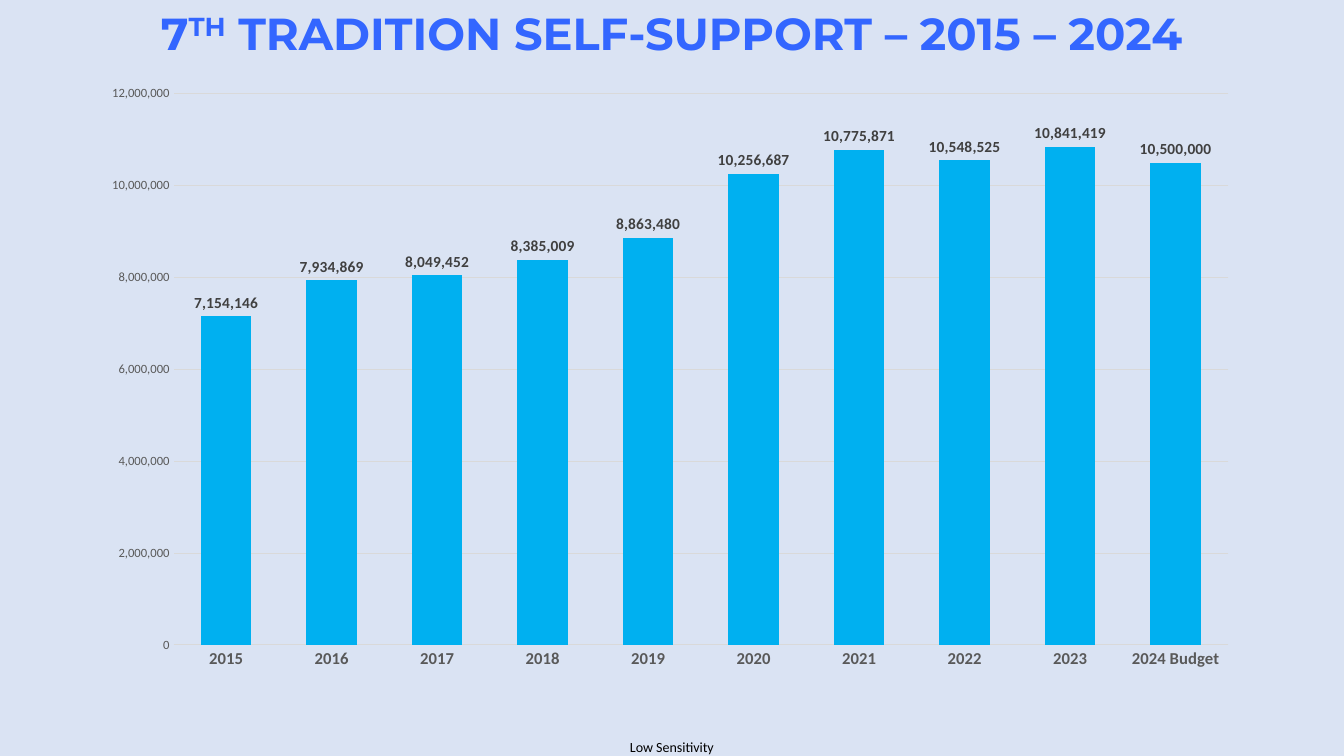
from dataclasses import dataclass

from lxml import etree
from pptx import Presentation
from pptx import util as u
from pptx.chart import data as chart_data
from pptx.dml import color
from pptx.enum import chart as ch
from pptx.enum import text
from pptx.oxml import ns


@dataclass(frozen=True)
class Theme:
    background: str = "DAE3F3"
    heading: str = "3366FF"
    bar: str = "00B0F0"
    grid: str = "D9D9D9"
    axis: str = "595959"
    value: str = "404040"
    ink: str = "000000"
    heading_font: str = "Montserrat"
    body_font: str = "Calibri"
    heading_size: float = 32
    year_size: float = 11.9
    value_size: float = 11
    note_size: float = 10
    scale_size: float = 9


CONTRIBUTIONS = {
    "2015": 7154146,
    "2016": 7934869,
    "2017": 8049452,
    "2018": 8385009,
    "2019": 8863480,
    "2020": 10256687,
    "2021": 10775871,
    "2022": 10548525,
    "2023": 10841419,
    "2024 Budget": 10500000,
}
PLOT_AREA = {"x": 0.07, "y": 0.03, "w": 0.91, "h": 0.91}


class SlideBuilder:
    def __init__(self, deck, theme):
        self.theme = theme
        self.slide = deck.slides.add_slide(deck.slide_layouts[5])
        fill = self.slide.background.fill
        fill.solid()
        fill.fore_color.rgb = self.rgb(theme.background)

    def rgb(self, value):
        return color.RGBColor.from_string(value)

    def style(self, font, size, ink, bold=False, face=None):
        font.name = face or self.theme.body_font
        font.size = u.Pt(size)
        font.bold = bold
        font.color.rgb = self.rgb(ink)

    def title(self, parts, left, top, width, height):
        heading = self.slide.shapes.title
        heading.left, heading.top = u.Pt(left), u.Pt(top)
        heading.width, heading.height = u.Pt(width), u.Pt(height)
        frame = heading.text_frame
        frame.auto_size = text.MSO_AUTO_SIZE.NONE
        frame.vertical_anchor = text.MSO_ANCHOR.MIDDLE
        line = frame.paragraphs[0]
        line.alignment = text.PP_ALIGN.CENTER
        for wording, raised in parts:
            run = line.add_run()
            run.text = wording
            self.style(run.font, self.theme.heading_size, self.theme.heading,
                       True, self.theme.heading_font)
            if raised:
                run._r.get_or_add_rPr().set("baseline", "30000")

    def note(self, wording, left, top, width, height):
        label = self.slide.shapes.add_textbox(
            u.Pt(left), u.Pt(top), u.Pt(width), u.Pt(height))
        frame = label.text_frame
        frame.margin_left = frame.margin_right = 0
        frame.margin_top = frame.margin_bottom = 0
        frame.word_wrap = False
        frame.text = wording
        self.style(frame.paragraphs[0].runs[0].font,
                   self.theme.note_size, self.theme.ink)

    def columns(self, values, left, top, width, height):
        figures = chart_data.CategoryChartData(number_format="#,##0")
        figures.categories = list(values)
        figures.add_series("Series 1", list(values.values()))
        chart = self.slide.shapes.add_chart(
            ch.XL_CHART_TYPE.COLUMN_CLUSTERED,
            u.Pt(left), u.Pt(top), u.Pt(width), u.Pt(height), figures).chart
        chart.has_title = False
        chart.has_legend = False
        self.style(chart.font, self.theme.note_size, self.theme.ink)
        self.axes(chart)
        self.bars(chart.plots[0])
        self.place_plot(chart)

    def axes(self, chart):
        years, scale = chart.category_axis, chart.value_axis
        for axis in (years, scale):
            axis.major_tick_mark = ch.XL_TICK_MARK.NONE
            axis.minor_tick_mark = ch.XL_TICK_MARK.NONE
        self.style(years.tick_labels.font, self.theme.year_size,
                   self.theme.axis, True)
        self.style(scale.tick_labels.font, self.theme.scale_size,
                   self.theme.axis)
        scale.minimum_scale, scale.maximum_scale = 0, 12000000
        scale.major_unit = 2000000
        scale.tick_labels.number_format = "#,##0"
        scale.tick_labels.number_format_is_linked = False
        scale.format.line.fill.background()
        for line in (years.format.line, scale.major_gridlines.format.line):
            line.color.rgb = self.rgb(self.theme.grid)
            line.width = u.Pt(0.75)

    def bars(self, plot):
        plot.gap_width, plot.overlap = 109, -39
        plot.vary_by_categories = False
        fill = plot.series[0].format.fill
        fill.solid()
        fill.fore_color.rgb = self.rgb(self.theme.bar)
        labels = plot.series[0].data_labels
        labels.show_value = True
        labels.position = ch.XL_LABEL_POSITION.OUTSIDE_END
        labels.number_format = "#,##0"
        labels.number_format_is_linked = False
        self.style(labels.font, self.theme.value_size, self.theme.value, True)

    def place_plot(self, chart):
        area = chart._chartSpace.chart.plotArea
        for automatic in area.findall(ns.qn("c:layout")):
            area.remove(automatic)
        layout = etree.Element(ns.qn("c:layout"))
        manual = etree.SubElement(layout, ns.qn("c:manualLayout"))
        settings = {"layoutTarget": "inner", "xMode": "edge", "yMode": "edge"}
        for tag, value in {**settings, **PLOT_AREA}.items():
            etree.SubElement(manual, ns.qn(f"c:{tag}")).set("val", str(value))
        area.insert(0, layout)


def main():
    deck = Presentation()
    deck.slide_width, deck.slide_height = u.Pt(960), u.Pt(540)
    support = SlideBuilder(deck, Theme())
    support.title([("7", False), ("TH", True),
                   (" TRADITION SELF-SUPPORT – 2015 – 2024", False)],
                  0, 0, 960, 46)
    support.columns(CONTRIBUTIONS, 66, 54, 828, 432.7)
    support.note("Low Sensitivity", 450, 527.8, 62.6, 12.2)
    deck.save("out.pptx")


if __name__ == "__main__":
    main()
